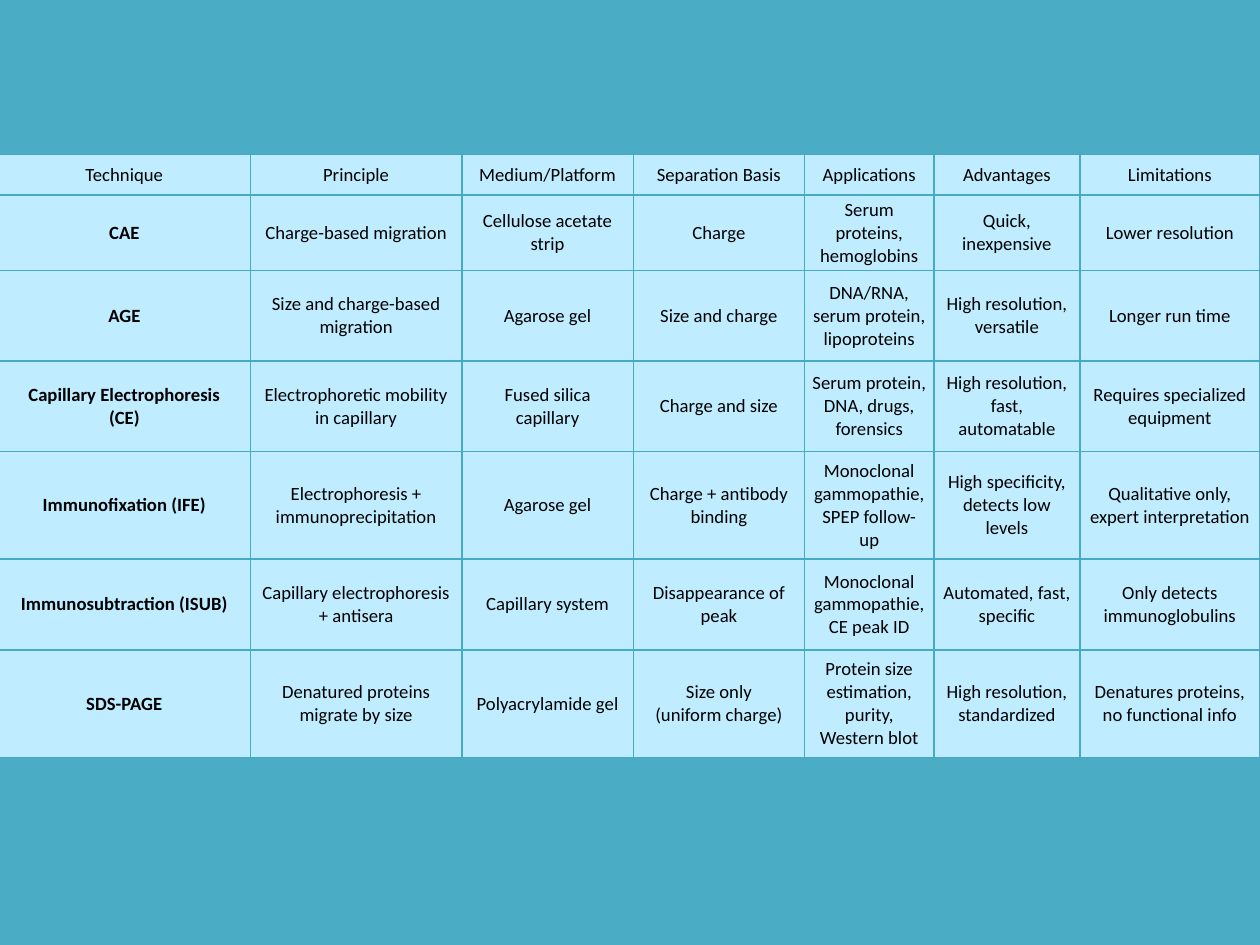
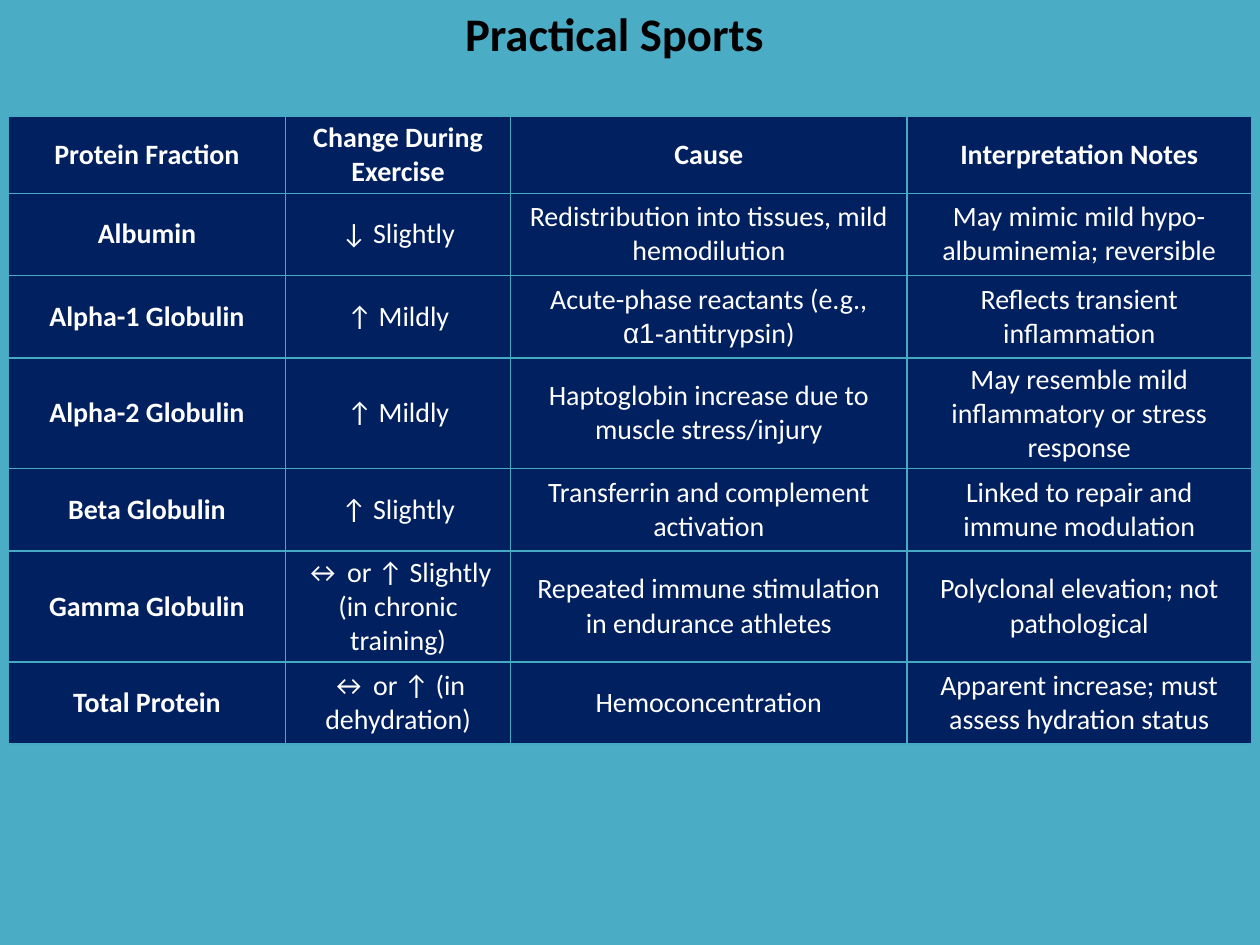
from dataclasses import dataclass

from lxml import etree
from pptx import Presentation
from pptx import util as u
from pptx.dml.color import RGBColor
from pptx.enum import text
from pptx.oxml import ns


@dataclass(frozen=True)
class Theme:
    background: str = "4BACC6"
    border: str = "46AAC5"
    pale: str = "BFECFF"
    navy: str = "002060"
    black: str = "000000"
    white: str = "FFFFFF"
    font: str = "Calibri"
    symbol_font: str = "Arial"
    title_size: int = 20
    body_size: int = 12
    small_size: int = 8
    border_width: float = 0.75


class Deck:
    """Slides on a grid of 75 columns by 56.25 rows."""

    COLUMNS, ROWS = 75, 56.25

    def __init__(self, theme):
        self.theme = theme
        self.prs = Presentation()
        self.prs.slide_width = u.Inches(7.5)
        self.prs.slide_height = int(self.prs.slide_width * 3 / 4)
        self.slide = None

    def x(self, columns):
        return round(self.prs.slide_width * columns / self.COLUMNS)

    def y(self, rows):
        return round(self.prs.slide_height * rows / self.ROWS)

    def new_slide(self):
        self.slide = self.prs.slides.add_slide(self.prs.slide_layouts[6])
        fill = self.slide.background.fill
        fill.solid()
        fill.fore_color.rgb = RGBColor.from_string(self.theme.background)

    def add_words(self, p, words, size, color, bold=False):
        """Newlines break the line; words between bars use the symbol font."""
        for i, line in enumerate(words.split("\n")):
            if i:
                p.add_line_break()
            for j, part in enumerate(line.split("|")):
                if not part:
                    continue
                r = p.add_run()
                r.text = part
                r.font.name = self.theme.symbol_font if j % 2 else self.theme.font
                r.font.size = u.Pt(size)
                r.font.bold = bold
                r.font.color.rgb = RGBColor.from_string(color)

    def title(self, words, left, top, width, height):
        sp = self.slide.shapes.add_textbox(
            self.x(left), self.y(top), self.x(width), self.y(height))
        tf = sp.text_frame
        tf.word_wrap = True
        tf.auto_size = text.MSO_AUTO_SIZE.SHAPE_TO_FIT_TEXT
        self.add_words(tf.paragraphs[0], words, self.theme.title_size,
                       self.theme.black, bold=True)

    def outline(self, cell):
        tc_pr = cell._tc.get_or_add_tcPr()
        for side in ("a:lnL", "a:lnR", "a:lnT", "a:lnB"):
            ln = etree.SubElement(tc_pr, ns.qn(side),
                                  w=str(int(u.Pt(self.theme.border_width))))
            fill = etree.SubElement(ln, ns.qn("a:solidFill"))
            etree.SubElement(fill, ns.qn("a:srgbClr"), val=self.theme.border)

    def table(self, data, left, top, widths, heights, size, color, fill,
              margins, bold_header):
        table = self.slide.shapes.add_table(
            len(heights), len(widths), self.x(left), self.y(top),
            self.x(sum(widths)), self.y(sum(heights))).table
        table.first_row = table.horz_banding = False
        for column, width in zip(table.columns, widths):
            column.width = self.x(width)
        for row, height in zip(table.rows, heights):
            row.height = self.y(height)
        side, edge = margins
        for i, row in enumerate(data):
            for j, words in enumerate(row):
                cell = table.cell(i, j)
                self.outline(cell)
                cell.fill.solid()
                cell.fill.fore_color.rgb = RGBColor.from_string(fill)
                cell.margin_left = cell.margin_right = self.x(side)
                cell.margin_top = cell.margin_bottom = self.y(edge)
                cell.vertical_anchor = text.MSO_ANCHOR.MIDDLE
                p = cell.text_frame.paragraphs[0]
                p.alignment = text.PP_ALIGN.CENTER
                bold = j == 0 if i else bold_header
                self.add_words(p, words, size, color, bold)


TECHNIQUES = [
    ["Technique", "Principle", "Medium/Platform", "Separation Basis",
     "Applications", "Advantages", "Limitations"],
    ["CAE", "Charge-based migration", "Cellulose acetate\nstrip", "Charge",
     "Serum\nproteins,\nhemoglobins", "Quick,\ninexpensive", "Lower resolution"],
    ["AGE", "Size and charge-based\nmigration", "Agarose gel", "Size and charge",
     "DNA/RNA,\nserum protein, lipoproteins", "High resolution, versatile",
     "Longer run time"],
    ["Capillary Electrophoresis\n(CE)", "Electrophoretic mobility in capillary",
     "Fused silica\ncapillary", "Charge and size",
     "Serum protein, DNA, drugs, forensics",
     "High resolution, fast,\nautomatable", "Requires specialized equipment"],
    ["Immunofixation (IFE)", "Electrophoresis +\nimmunoprecipitation",
     "Agarose gel", "Charge + antibody binding",
     "Monoclonal\ngammopathie, SPEP follow-\nup",
     "High specificity, detects low\nlevels",
     "Qualitative only,\nexpert interpretation"],
    ["Immunosubtraction (ISUB)", "Capillary electrophoresis + antisera",
     "Capillary system", "Disappearance of\npeak",
     "Monoclonal\ngammopathie, CE peak ID", "Automated, fast, specific",
     "Only detects\nimmunoglobulins"],
    ["SDS-PAGE", "Denatured proteins\nmigrate by size", "Polyacrylamide gel",
     "Size only\n(uniform charge)",
     "Protein size\nestimation,\npurity,\nWestern blot",
     "High resolution, standardized", "Denatures proteins, no functional info"],
]

EXERCISE = [
    ["Protein Fraction", "Change During Exercise", "Cause",
     "Interpretation Notes"],
    ["Albumin", "↓ Slightly", "Redistribution into tissues, mild\nhemodilution",
     "May mimic mild hypo-\nalbuminemia; reversible"],
    ["Alpha-1 Globulin", "↑ Mildly",
     "Acute-phase reactants (e.g.,\n|α1-|antitrypsin)",
     "Reflects transient\ninflammation"],
    ["Alpha-2 Globulin", "↑ Mildly",
     "Haptoglobin increase due to\nmuscle stress/injury",
     "May resemble mild\ninflammatory or stress\nresponse"],
    ["Beta Globulin", "↑ Slightly", "Transferrin and complement\nactivation",
     "Linked to repair and\nimmune modulation"],
    ["Gamma Globulin", "↔ or ↑ Slightly\n(in chronic\ntraining)",
     "Repeated immune stimulation\nin endurance athletes",
     "Polyclonal elevation; not\npathological"],
    ["Total Protein", "↔ or ↑ (in\ndehydration)", "Hemoconcentration",
     "Apparent increase; must\nassess hydration status"],
]


def main():
    theme = Theme()
    deck = Deck(theme)

    # Electrophoresis techniques
    deck.new_slide()
    deck.table(TECHNIQUES, -0.1, 9.2,
               widths=[15, 12.6, 10.2, 10.2, 7.7, 8.7, 10.7],
               heights=[2.4, 4.4, 5.4, 5.4, 6.4, 5.4, 6.4],
               size=theme.small_size, color=theme.black, fill=theme.pale,
               margins=(0.4, 0.2), bold_header=False)

    # Protein changes during exercise
    deck.new_slide()
    deck.title("Practical Sports", 26.7, -0.2, 21.7, 4.4)
    deck.table(EXERCISE, 0.5, 6.9,
               widths=[16.5, 13.4, 23.6, 20.5],
               heights=[4.6, 4.9, 4.9, 6.6, 4.9, 6.6, 4.9],
               size=theme.body_size, color=theme.white, fill=theme.navy,
               margins=(0.6, 0.3), bold_header=True)

    deck.prs.save("out.pptx")


if __name__ == "__main__":
    main()
